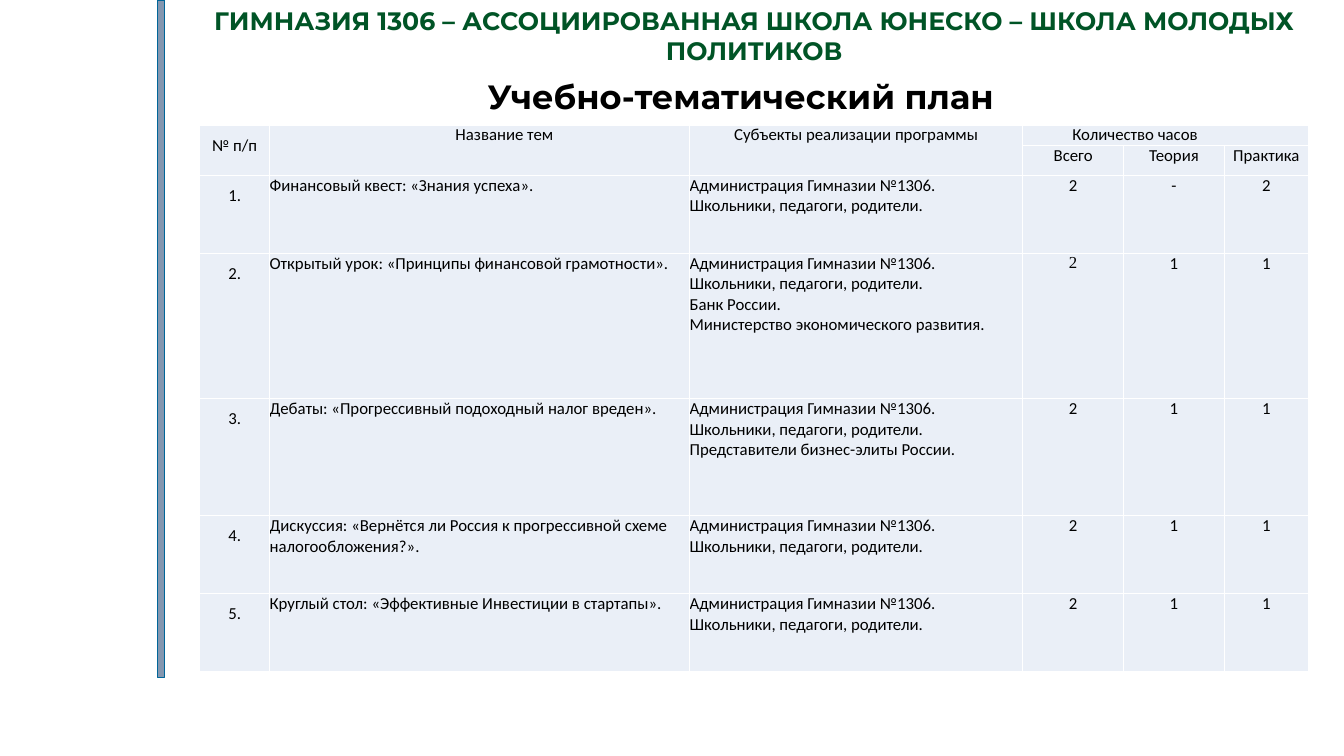
from dataclasses import dataclass

from lxml import etree
from pptx import Presentation
from pptx.dml.color import RGBColor
from pptx.enum.shapes import MSO_SHAPE
from pptx.enum.text import MSO_ANCHOR, PP_ALIGN
from pptx.oxml.ns import qn
from pptx.util import Pt

LEFT, CENTER = PP_ALIGN.LEFT, PP_ALIGN.CENTER
TOP = MSO_ANCHOR.TOP
RECTANGLE = MSO_SHAPE.RECTANGLE


@dataclass(frozen=True)
class Theme:
    green: str = "005426"
    black: str = "000000"
    white: str = "FFFFFF"
    bar_fill: str = "8497B0"
    bar_line: str = "006699"
    cell_fill: str = "EAEFF7"
    heading_font: str = "Montserrat"
    table_font: str = "Calibri"
    number_font: str = "Times New Roman"
    school_size: int = 18
    title_size: int = 24
    table_size: int = 12


THEME = Theme()

# Table content
COLUMN_WIDTHS = [50, 300, 238, 72, 72, 60]
ROW_HEIGHTS = [13.9, 13.9, 55.7, 103.8, 83.6, 55.7, 55.7]
HOURS = ["Всего", "Теория", "Практика"]
PARTNERS = ["Администрация Гимназии №1306.", "Школьники, педагоги, родители."]
TOPICS = [
    ("Финансовый квест: «Знания успеха».", [], "2-2"),
    ("Открытый урок: «Принципы финансовой грамотности».",
     ["Банк России.", "Министерство экономического развития."], "211"),
    ("Дебаты: «Прогрессивный подоходный налог вреден».",
     ["Представители бизнес-элиты России."], "211"),
    ("Дискуссия: «Вернётся ли Россия к прогрессивной схеме налогообложения?».", [], "211"),
    ("Круглый стол: «Эффективные Инвестиции в стартапы».", [], "211"),
]


def color(value):
    return RGBColor.from_string(value)


def write(frame, text, size=THEME.table_size, font=THEME.table_font, ink=THEME.black,
          bold=False, align=LEFT, spacing=None, indent=0):
    """Fill a text frame, one paragraph for each line of text."""
    for index, line in enumerate(text.split("\n")):
        para = frame.add_paragraph() if index else frame.paragraphs[0]
        para.alignment = align
        if spacing:
            para.line_spacing = spacing
        if indent:
            properties = para._p.get_or_add_pPr()
            properties.set("marL", "0")
            properties.set("indent", str(Pt(indent)))
        span = para.add_run()
        span.text = line
        span.font.size = Pt(size)
        span.font.name = font
        span.font.bold = bold
        span.font.color.rgb = color(ink)


def add_text(page, left, top, width, height, text, **style):
    box = page.shapes.add_textbox(Pt(left), Pt(top), Pt(width), Pt(height))
    box.text_frame.word_wrap = True
    box.text_frame.vertical_anchor = TOP
    write(box.text_frame, text, align=CENTER, bold=True, font=THEME.heading_font, **style)


def add_bar(page, left, top, width, height):
    bar = page.shapes.add_shape(RECTANGLE, Pt(left), Pt(top), Pt(width), Pt(height))
    bar.shadow.inherit = False
    bar.fill.solid()
    bar.fill.fore_color.rgb = color(THEME.bar_fill)
    bar.line.color.rgb = color(THEME.bar_line)
    bar.line.width = Pt(1)


def format_cell(cell):
    """Remove the margins, draw white borders and fill the cell."""
    cell.margin_left = cell.margin_right = cell.margin_top = cell.margin_bottom = 0
    properties = cell._tc.get_or_add_tcPr()
    for side in ("a:lnL", "a:lnR", "a:lnT", "a:lnB"):
        border = etree.SubElement(properties, qn(side), w=str(Pt(1)))
        paint = etree.SubElement(border, qn("a:solidFill"))
        etree.SubElement(paint, qn("a:srgbClr"), val=THEME.white)
    cell.fill.solid()
    cell.fill.fore_color.rgb = color(THEME.cell_fill)


def add_grid(page, left, top):
    frame = page.shapes.add_table(len(ROW_HEIGHTS), len(COLUMN_WIDTHS), Pt(left), Pt(top),
                                  Pt(sum(COLUMN_WIDTHS)), Pt(sum(ROW_HEIGHTS)))
    grid = frame.table
    grid.first_row = grid.horz_banding = False
    for column, width in zip(grid.columns, COLUMN_WIDTHS):
        column.width = Pt(width)
    for row, height in zip(grid.rows, ROW_HEIGHTS):
        row.height = Pt(height)
    for cell in grid.iter_cells():
        format_cell(cell)
    return grid


def fill_header(grid):
    for column in range(3):
        grid.cell(0, column).merge(grid.cell(1, column))
    grid.cell(0, 3).merge(grid.cell(0, 5))
    headings = [
        ("№ п/п", dict(align=CENTER, spacing=1.5)),
        ("Название тем", dict(align=CENTER, indent=35.4)),
        ("Субъекты реализации программы", dict(align=CENTER)),
        ("Количество часов", dict(indent=35.4)),
    ]
    for column, (text, style) in enumerate(headings):
        write(grid.cell(0, column).text_frame, text, **style)
    for column, text in enumerate(HOURS, start=3):
        write(grid.cell(1, column).text_frame, text, align=CENTER)


def fill_topics(grid):
    for number, (topic, guests, hours) in enumerate(TOPICS, start=1):
        cells = [cell.text_frame for cell in grid.rows[number + 1].cells]
        write(cells[0], f"{number}.", align=CENTER, spacing=1.5)
        write(cells[1], topic)
        write(cells[2], "\n".join(PARTNERS + guests))
        for column, value in enumerate(hours, start=3):
            serif = (number, column) == (2, 3)
            write(cells[column], value, align=CENTER,
                  font=THEME.number_font if serif else THEME.table_font)


def main():
    deck = Presentation()
    deck.slide_width, deck.slide_height = Pt(960), Pt(540)
    page = deck.slides.add_slide(deck.slide_layouts[6])

    # School name and side bar
    add_text(page, 117.4, 0, 842.6, 51,
             "ГИМНАЗИЯ 1306 – АССОЦИИРОВАННАЯ ШКОЛА ЮНЕСКО – ШКОЛА МОЛОДЫХ ПОЛИТИКОВ",
             size=THEME.school_size, ink=THEME.green)
    add_bar(page, 112.4, 0, 5, 484)

    # Title
    add_text(page, 286, 54, 486, 42, "Учебно-тематический план",
             size=THEME.title_size, spacing=0.9)

    # Study plan
    grid = add_grid(page, 142.6, 89.3)
    fill_header(grid)
    fill_topics(grid)

    deck.save("out.pptx")


if __name__ == "__main__":
    main()
